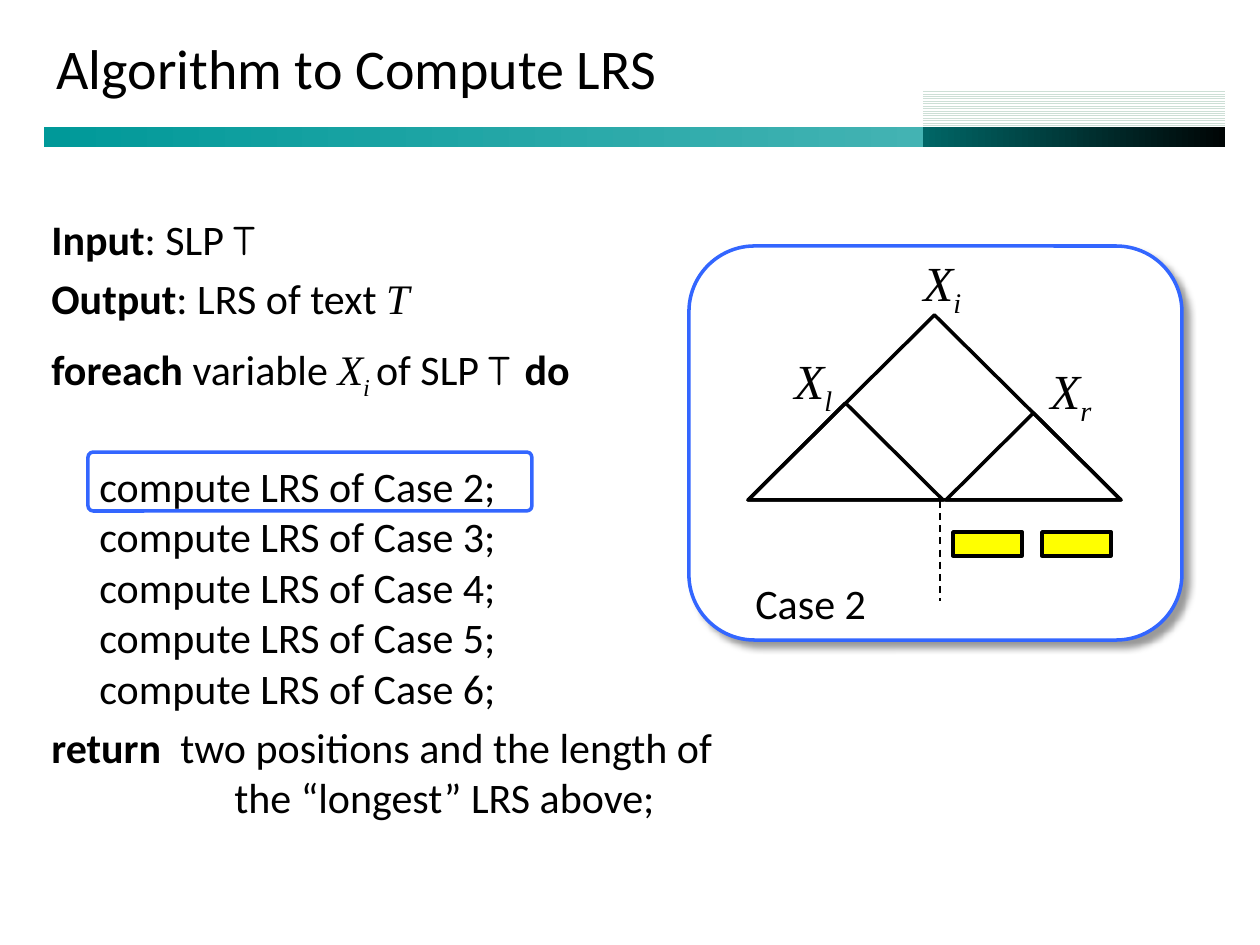
from lxml import etree
from pptx import Presentation, util as u
from pptx.dml.color import RGBColor
from pptx.enum import dml, shapes, text
from pptx.oxml.ns import qn

PX = 7257.14  # EMU per px, 126 px to the inch
COLORS = {"ink": "000000", "white": "FFFFFF", "frame": "3366FF", "mark": "FFFF00",
          "teal": "009999", "teal_end": "43B3B3", "deep": "006666", "deep_end": "000505",
          "stripe": "CDDFD6"}
SANS, SERIF, SCRIPT = "Calibri", "Times New Roman", "Comic Neue"

BOLD = {"bold": True}
SLP = {"font": SCRIPT}
MATH = {"font": SERIF, "italic": True}
SUB = {**MATH, "sub": True}

TITLE = [([("Algorithm to Compute LRS", {})], {})]
# Each paragraph: runs, then spacing before (pt), left margin and first-line indent (px)
ALGORITHM = [
    ([("Input", BOLD), (": SLP ", {}), ("T", SLP)], {}),
    ([("Output", BOLD), (": LRS of text ", {}), ("T", MATH)], {"before": 5}),
    ([("foreach", BOLD), (" variable ", {}), ("X", MATH), ("i ", SUB),
      ("of SLP ", {}), ("T ", SLP), ("do", BOLD)], {"before": 12}),
    *[([(f"compute LRS of Case {case};", {})],
       {"before": 34 if case == 2 else 0, "margin": 48}) for case in range(2, 7)],
    ([("return", BOLD), ("\ttwo positions and the length of", {})],
     {"before": 5, "margin": 129, "indent": -129}),
    ([("the “longest” LRS above;", {})], {"margin": 183}),
]
CASE_LABEL = [([("Case 2", {})], {})]

NODE_LABELS = [("i", 911, 246, 69), ("l", 782, 344, 69), ("r", 1038, 354, 79)]
TRIANGLES = [(748, 315, 373, 185), (748, 403, 195, 97), (946, 413, 175, 87)]
REPEATS_LEFT = (953, 1042)


def px(n):
    return u.Emu(round(n * PX))


def rgb(name):
    return RGBColor.from_string(COLORS[name])


def add_text(slide, box, paragraphs, size=24, anchor=text.MSO_ANCHOR.TOP, wrap=True):
    frame = slide.shapes.add_textbox(*map(px, box)).text_frame
    frame.word_wrap = wrap
    frame.vertical_anchor = anchor
    for n, (runs, layout) in enumerate(paragraphs):
        para = frame.paragraphs[0] if n == 0 else frame.add_paragraph()
        para.space_before = u.Pt(layout.get("before", 0))
        pPr = para._p.get_or_add_pPr()
        pPr.set("marL", str(px(layout.get("margin", 0))))
        pPr.set("indent", str(px(layout.get("indent", 0))))
        for words, style in runs:
            run = para.add_run()
            run.text = words
            run.font.size = u.Pt(size)
            run.font.name = style.get("font", SANS)
            run.font.bold = style.get("bold", False)
            run.font.italic = style.get("italic", False)
            run.font.color.rgb = rgb("ink")
            if style.get("sub"):
                run._r.get_or_add_rPr().set("baseline", "-25000")


def add_shape(slide, kind, box, fill=None, line=None):
    shape = slide.shapes.add_shape(kind, *map(px, box))
    shape.shadow.inherit = False
    if fill:
        shape.fill.solid()
        shape.fill.fore_color.rgb = rgb(fill)
    else:
        shape.fill.background()
    if line:
        shape.line.color.rgb = rgb(line)
        shape.line.width = u.Pt(2)
    else:
        shape.line.fill.background()
    return shape


def add_gradient_bar(slide, box, start, end):
    bar = add_shape(slide, shapes.MSO_SHAPE.RECTANGLE, box)
    bar.fill.gradient()
    bar.fill.gradient_angle = 0
    for stop, name, position in zip(bar.fill.gradient_stops, (start, end), (0, 1)):
        stop.color.rgb = rgb(name)
        stop.position = position


def add_drop_shadow(shape):
    effects = shape._element.spPr.find(qn("a:effectLst"))
    shadow = etree.SubElement(effects, qn("a:outerShdw"), blurRad=str(u.Pt(4)),
                              dist=str(u.Pt(5)), dir="2700000", algn="tl", rotWithShape="0")
    color = etree.SubElement(shadow, qn("a:srgbClr"), val=COLORS["ink"])
    etree.SubElement(color, qn("a:alpha"), val="40000")


def add_header(slide):
    add_gradient_bar(slide, (44, 127, 879, 20), "teal", "teal_end")
    stripes = add_shape(slide, shapes.MSO_SHAPE.RECTANGLE, (923, 89, 302, 38))
    stripes.fill.patterned()
    stripes.fill.pattern = dml.MSO_PATTERN.NARROW_HORIZONTAL
    stripes.fill.fore_color.rgb = rgb("stripe")
    stripes.fill.back_color.rgb = rgb("white")
    add_gradient_bar(slide, (923, 127, 302, 20), "deep", "deep_end")
    add_text(slide, (44, 16, 1182, 102), TITLE, size=32, anchor=text.MSO_ANCHOR.MIDDLE)


def add_case_diagram(slide):
    panel = add_shape(slide, shapes.MSO_SHAPE.ROUNDED_RECTANGLE, (689, 246, 493, 394),
                      "white", "frame")
    add_drop_shadow(panel)
    for box in TRIANGLES:
        add_shape(slide, shapes.MSO_SHAPE.ISOSCELES_TRIANGLE, box, line="ink")
    for left in REPEATS_LEFT:
        add_shape(slide, shapes.MSO_SHAPE.RECTANGLE, (left, 532, 69, 24), "mark", "ink")
    for index, left, top, width in NODE_LABELS:
        add_text(slide, (left, top, width, 72), [([("X", MATH), (index, SUB)], {})], size=28)
    split = slide.shapes.add_connector(shapes.MSO_CONNECTOR.STRAIGHT,
                                       *map(px, (940, 501, 940, 601)))
    split.line.color.rgb = rgb("ink")
    split.line.width = u.Pt(1)
    split.line.dash_style = dml.MSO_LINE.DASH
    etree.SubElement(split._element.spPr, qn("a:effectLst"))
    add_text(slide, (743, 571, 137, 63), CASE_LABEL, wrap=False)


def main():
    deck = Presentation()
    deck.slide_width, deck.slide_height = px(1260), px(945)
    slide = deck.slides.add_slide(deck.slide_layouts[6])
    add_header(slide)
    add_case_diagram(slide)
    add_text(slide, (39, 207, 728, 679), ALGORITHM)
    highlight = add_shape(slide, shapes.MSO_SHAPE.ROUNDED_RECTANGLE, (88, 452, 444, 59),
                          line="frame")
    highlight.adjustments[0] = 0.09
    deck.save("out.pptx")


if __name__ == "__main__":
    main()
